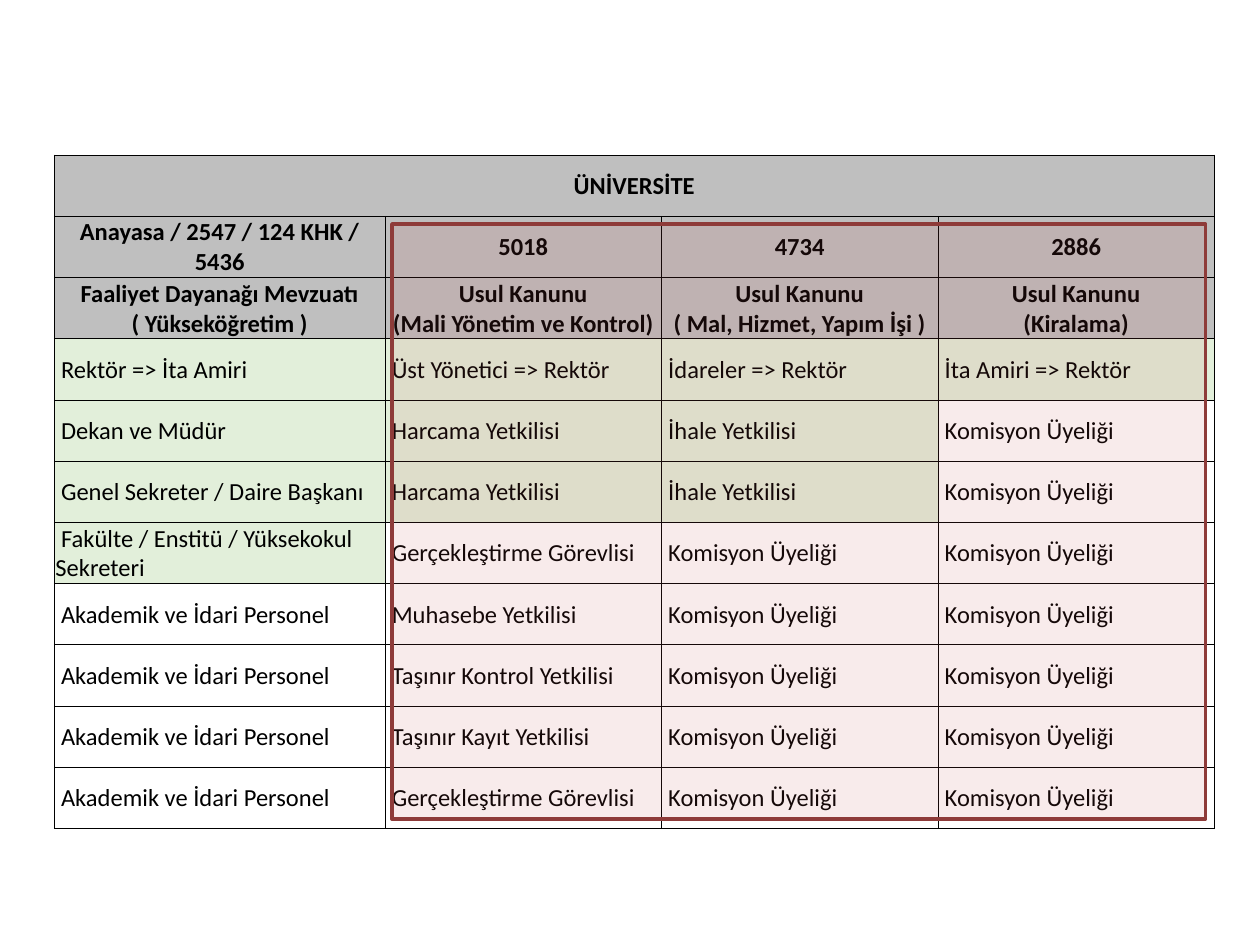
from lxml.etree import SubElement
from pptx import Presentation
from pptx.dml.color import RGBColor
from pptx.enum.shapes import MSO_SHAPE as Shape
from pptx.enum.text import MSO_ANCHOR as Anchor, PP_ALIGN as Align
from pptx.oxml.ns import qn
from pptx.util import Pt

BLACK = RGBColor(0x00, 0x00, 0x00)
GREY = RGBColor(0xBF, 0xBF, 0xBF)
GREEN = RGBColor(0xE2, 0xEF, 0xDA)
RED = RGBColor(0xC0, 0x50, 0x4D)
DARK_RED = RGBColor(0x8E, 0x3B, 0x39)

COMMISSION = "Komisyon Üyeliği"
STAFF = "Akademik ve İdari Personel"

HEADINGS = [
    ["ÜNİVERSİTE"],
    ["Anayasa / 2547 / 124 KHK / 5436", "5018", "4734", "2886"],
    ["Faaliyet Dayanağı Mevzuatı\n( Yükseköğretim )",
     "Usul Kanunu\n(Mali Yönetim ve Kontrol)",
     "Usul Kanunu\n( Mal, Hizmet, Yapım İşi )",
     "Usul Kanunu\n(Kiralama)"],
]
ROLES = [
    (4, ["Rektör => İta Amiri", "Üst Yönetici => Rektör",
         "İdareler => Rektör", "İta Amiri => Rektör"]),
    (3, ["Dekan ve Müdür", "Harcama Yetkilisi", "İhale Yetkilisi", COMMISSION]),
    (3, ["Genel Sekreter / Daire Başkanı", "Harcama Yetkilisi",
         "İhale Yetkilisi", COMMISSION]),
    (1, ["Fakülte / Enstitü / Yüksekokul Sekreteri",
         "Gerçekleştirme Görevlisi", COMMISSION, COMMISSION]),
] + [
    (0, [STAFF, duty, COMMISSION, COMMISSION])
    for duty in ["Muhasebe Yetkilisi", "Taşınır Kontrol Yetkilisi",
                 "Taşınır Kayıt Yetkilisi", "Gerçekleştirme Görevlisi"]
]


class SlideBuilder:
    font_name = "Calibri"
    font_size = Pt(14)
    first_indent = Pt(3.2)
    inset = Pt(0.7)

    def __init__(self, slide):
        self.slide = slide

    def table(self, left, top, widths, row_height, row_count):
        frame = self.slide.shapes.add_table(
            row_count, len(widths), Pt(left), Pt(top),
            Pt(sum(widths)), Pt(row_height * row_count))
        table = frame.table
        table.first_row = False
        table.horz_banding = False
        for column, width in zip(table.columns, widths):
            column.width = Pt(width)
        for row in table.rows:
            row.height = Pt(row_height)
            for cell in row.cells:
                self.borders(cell)
                cell.fill.background()
        return table

    def borders(self, cell):
        properties = cell._tc.get_or_add_tcPr()
        for side in ("lnL", "lnR", "lnT", "lnB"):
            border = SubElement(properties, qn(f"a:{side}"), w=str(Pt(0.5)))
            paint = SubElement(border, qn("a:solidFill"))
            SubElement(paint, qn("a:srgbClr"), val=str(BLACK))

    def cell(self, cell, text, fill=None, heading=False):
        cell.vertical_anchor = Anchor.MIDDLE
        cell.margin_left = cell.margin_right = cell.margin_top = self.inset
        cell.margin_bottom = 0
        if fill is not None:
            cell.fill.solid()
            cell.fill.fore_color.rgb = fill
        frame = cell.text_frame
        for number, line in enumerate(text.split("\n")):
            paragraph = frame.add_paragraph() if number else frame.paragraphs[0]
            paragraph.alignment = Align.CENTER if heading else Align.LEFT
            if not heading:
                paragraph._p.get_or_add_pPr().set("indent", str(self.first_indent))
            run = paragraph.add_run()
            run.text = line
            run.font.name = self.font_name
            run.font.size = self.font_size
            run.font.bold = heading
            run.font.color.rgb = BLACK

    def highlight(self, left, top, width, height, opacity):
        box = self.slide.shapes.add_shape(
            Shape.RECTANGLE, Pt(left), Pt(top), Pt(width), Pt(height))
        box.shadow.inherit = False
        box.fill.solid()
        box.fill.fore_color.rgb = RED
        colour = box._element.spPr.find(qn("a:solidFill")).find(qn("a:srgbClr"))
        SubElement(colour, qn("a:alpha"), val=str(opacity * 1000))
        box.line.color.rgb = DARK_RED
        box.line.width = Pt(2)


def main():
    deck = Presentation()
    deck.slide_width, deck.slide_height = Pt(720), Pt(540)
    builder = SlideBuilder(deck.slides.add_slide(deck.slide_layouts[6]))

    duties = builder.table(31, 88.6, [189, 158, 158, 158], 35,
                           len(HEADINGS) + len(ROLES))
    duties.cell(0, 0).merge(duties.cell(0, 3))
    for row, labels in enumerate(HEADINGS):
        for column, label in enumerate(labels):
            builder.cell(duties.cell(row, column), label, GREY, heading=True)
    for row, (green_count, roles) in enumerate(ROLES, len(HEADINGS)):
        for column, role in enumerate(roles):
            fill = GREEN if column < green_count else None
            builder.cell(duties.cell(row, column), role, fill)

    builder.highlight(224, 128, 465, 340, opacity=11)
    deck.save("out.pptx")


if __name__ == "__main__":
    main()
